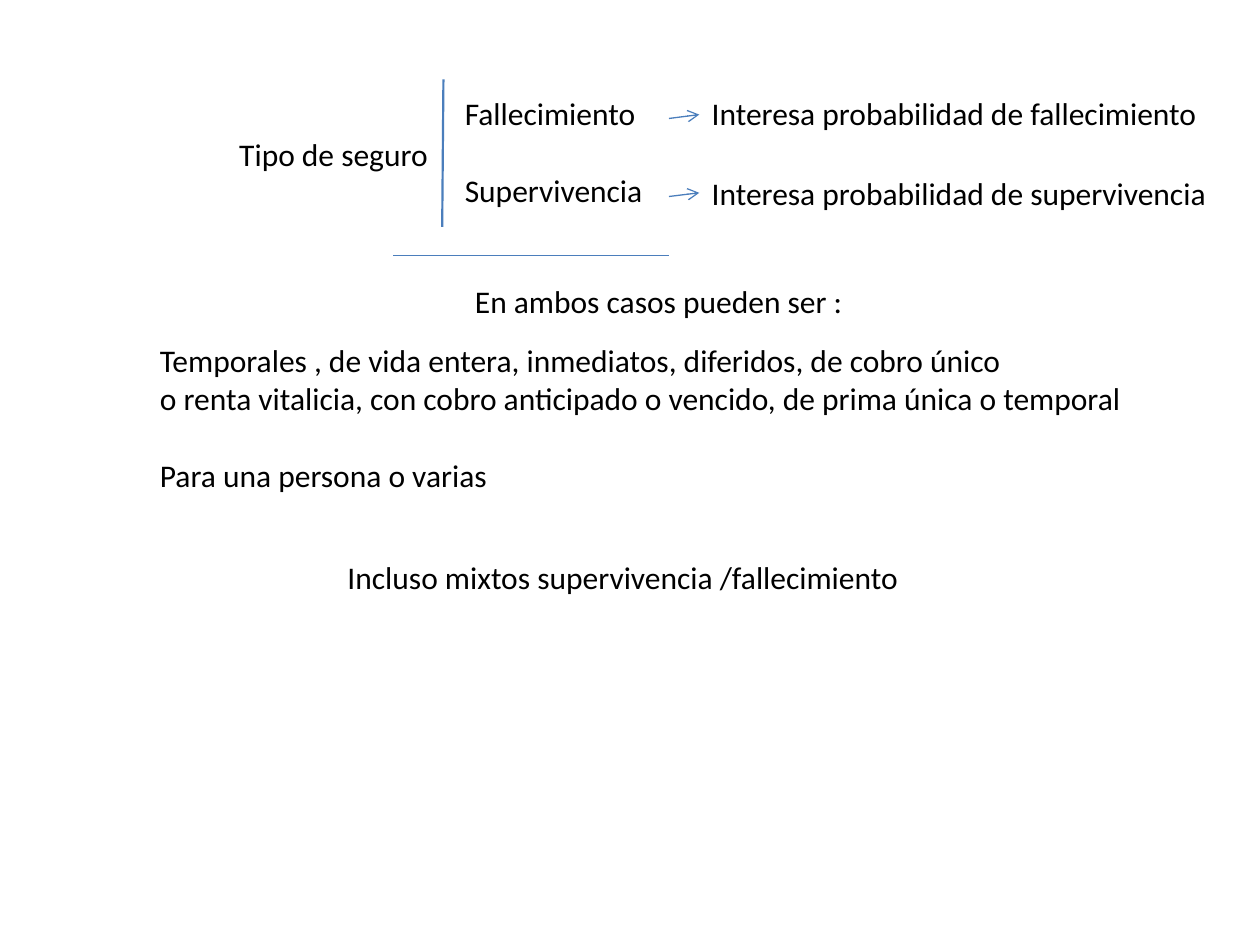
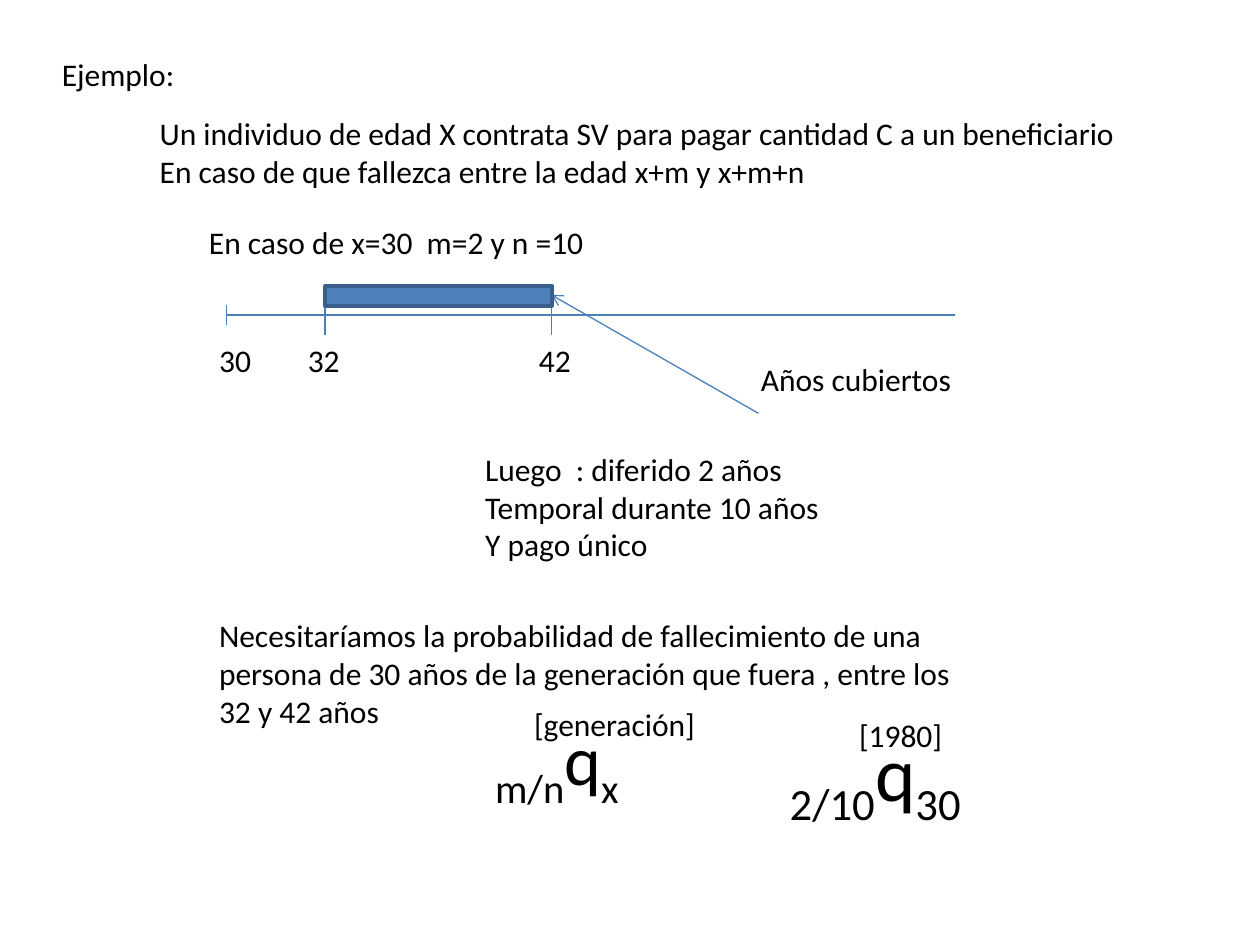
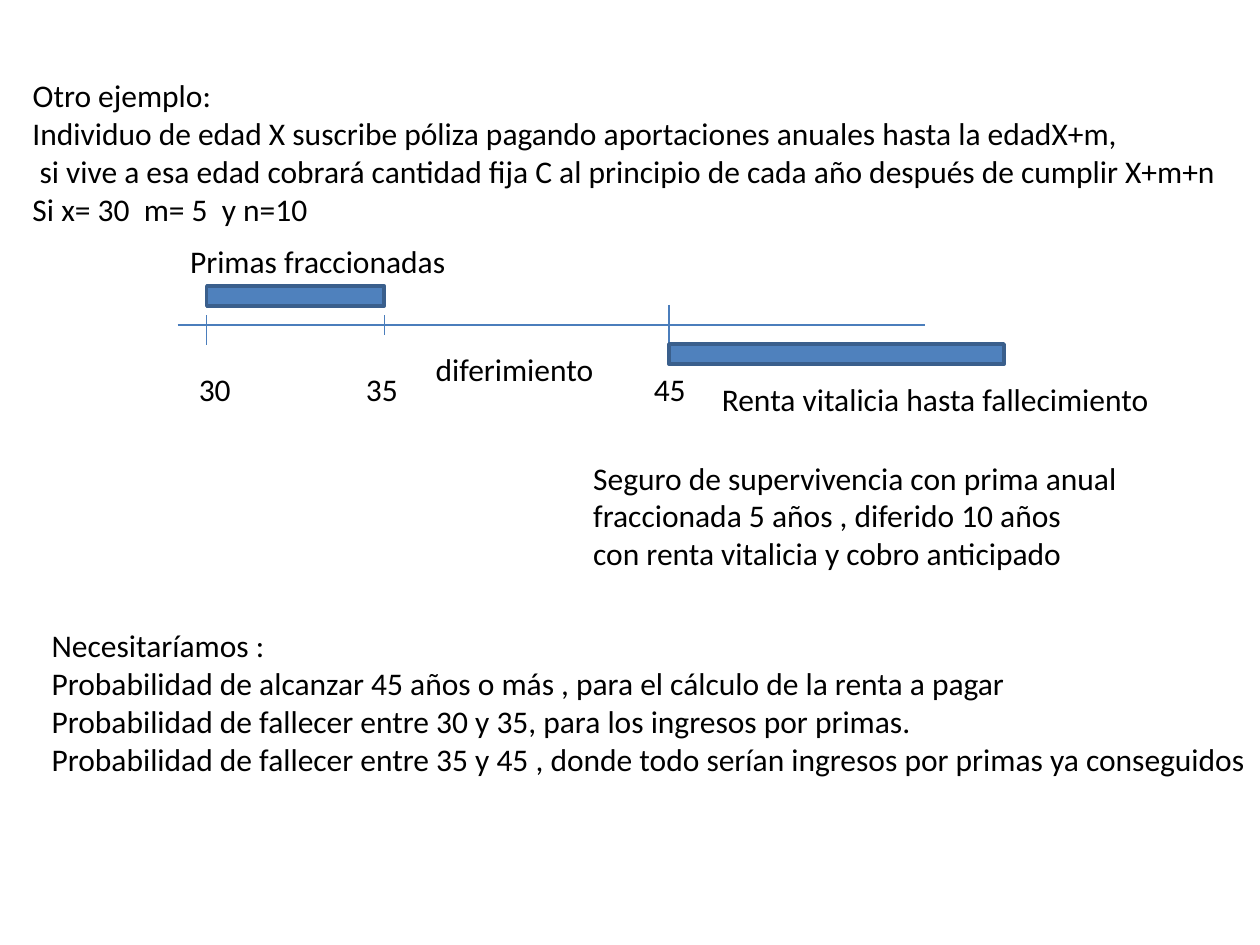
from lxml import etree
from pptx import Presentation
from pptx.dml.color import RGBColor
from pptx.enum.shapes import MSO_CONNECTOR as Connector, MSO_SHAPE as Shape
from pptx.enum.text import MSO_ANCHOR as Anchor, MSO_AUTO_SIZE as AutoSize, PP_ALIGN as Align
from pptx.oxml.ns import qn
from pptx.util import Pt

BLACK = RGBColor(0x00, 0x00, 0x00)
LINE_BLUE = RGBColor(0x4B, 0x7E, 0xBC)
BAR_BLUE = RGBColor(0x4F, 0x81, 0xBD)
BAR_EDGE = RGBColor(0x3A, 0x5F, 0x8C)

FRAME_FORMAT = {"word_wrap": True, "auto_size": AutoSize.NONE, "vertical_anchor": Anchor.TOP,
                "margin_left": Pt(7.2), "margin_right": Pt(7.2),
                "margin_top": Pt(3.6), "margin_bottom": Pt(3.6)}
FONT_FORMAT = {"name": "Calibri", "size": Pt(18), "bold": False}
GAP_BEFORE = {"Supervivencia": 22, "Para una persona o varias": 22}
LINE_HEIGHT = 22
BAR_HEIGHT = 11.5
HAIRLINE = 0.75


def write(box, left, top, width, lines, size=18):
    gaps = sum(GAP_BEFORE.get(line, 0) for line in lines)
    box.left, box.top, box.width = Pt(left), Pt(top), Pt(width)
    box.height = Pt(7.2 + gaps + len(lines) * LINE_HEIGHT * size / 18)
    frame = box.text_frame
    for name, value in FRAME_FORMAT.items():
        setattr(frame, name, value)
    for index, line in enumerate(lines):
        para = frame.add_paragraph() if index else frame.paragraphs[0]
        para.alignment = Align.LEFT
        para.space_before = Pt(GAP_BEFORE.get(line, 0))
        for piece in [line] if isinstance(line, str) else line:
            span = para.add_run()
            span.text = piece
            for name, value in FONT_FORMAT.items():
                setattr(span.font, name, value)
            span.font.size = Pt(size)
            span.font.color.rgb = BLACK


def draw_line(page, x1, y1, x2, y2, weight=HAIRLINE, arrow=False):
    line = page.shapes.add_connector(Connector.STRAIGHT, Pt(x1), Pt(y1), Pt(x2), Pt(y2))
    line.line.color.rgb = LINE_BLUE
    line.line.width = Pt(weight)
    properties = line.element.spPr
    if arrow:
        etree.SubElement(properties.find(qn("a:ln")), qn("a:tailEnd"), type="arrow")
    etree.SubElement(properties, qn("a:effectLst"))


PAGES = [
    {
        "title": (129.5, 73.4, 135, ["Tipo de seguro"]),
        "body": (84.2, 191.5, 580, [
            "Temporales , de vida entera, inmediatos, diferidos, de cobro único",
            "o renta vitalicia, con cobro anticipado o vencido, de prima única o temporal",
            "Para una persona o varias"]),
        "texts": [
            (258.5, 50.4, 121, ["Fallecimiento", "Supervivencia"]),
            (399.6, 50.4, 300, ["Interesa probabilidad de fallecimiento"]),
            (399.6, 95.8, 306, ["Interesa probabilidad de supervivencia"]),
            (264.3, 157.7, 232, ["En ambos casos pueden ser :"]),
            (191.5, 315.4, 338, ["Incluso mixtos supervivencia /fallecimiento"])],
        "lines": [
            (253.4, 45.4, 252.7, 129.6, 1.25),
            (382.3, 67.7, 399.6, 65.5, HAIRLINE, True),
            (382.3, 112.3, 399.6, 110.2, HAIRLINE, True),
            (224.6, 146.2, 382.3, 146.2)],
        "bars": [],
    },
    {
        "title": (28.1, 28.1, 86, ["Ejemplo:"]),
        "body": (270, 253.4, 214, [
            "Luego  : diferido 2 años", "Temporal durante 10 años", "Y pago único"]),
        "texts": [
            (84.2, 61.9, 576, [
                "Un individuo de edad X contrata SV para pagar cantidad C a un beneficiario",
                "En caso de que fallezca entre la edad x+m y x+m+n"]),
            (112.3, 123.8, 238, ["En caso de x=30  m=2 y n =10"]),
            (427.7, 202.3, 130, ["Años cubiertos"]),
            (118.1, 348.5, 444.2, [
                "Necesitaríamos la probabilidad de fallecimiento de una persona de 30 años "
                "de la generación que fuera , entre los 32 y 42 años"]),
            (298.1, 399.6, 112, ["[generación]"]),
            (483.8, 405.4, 68, ["[1980]"])],
        "lines": [
            (129.6, 180, 545.8, 180),
            (129.6, 174.2, 129.6, 185.8),
            (185.8, 174.2, 185.8, 191.5),
            (315, 174.2, 315, 191.5),
            (433.4, 236.2, 315, 168.5, HAIRLINE, True)],
        "bars": [(185.8, 163.4, 129.6)],
        "ages": (191.5, {"30": 118.1, "32": 168.8, "42": 300.8}),
        "formulas": [
            (275.8, 405.4, 100, [("m/n", "q", "x")], 40),
            (444.2, 410.4, 132, [("2/10", "q", "30")], 44)],
    },
    {
        "title": (11.5, 39.6, 120, ["Otro ejemplo:"]),
        "body": (22.3, 354.2, 714, [
            "Necesitaríamos :",
            "Probabilidad de alcanzar 45 años o más , para el cálculo de la renta a pagar",
            "Probabilidad de fallecer entre 30 y 35, para los ingresos por primas.",
            "Probabilidad de fallecer entre 35 y 45 , donde todo serían ingresos por primas ya conseguidos"]),
        "texts": [
            (11.5, 61.6, 706, [
                "Individuo de edad X suscribe póliza pagando aportaciones anuales hasta la edadX+m,",
                " si vive a esa edad cobrará cantidad fija C al principio de cada año después de cumplir X+m+n",
                "Si x= 30  m= 5  y n=10"]),
            (101.5, 134.6, 168, ["Primas fraccionadas"]),
            (241.9, 196.6, 112, ["diferimiento"]),
            (405.4, 213.8, 268, ["Renta vitalicia hasta fallecimiento"]),
            (331.9, 258.5, 324, [
                "Seguro de supervivencia con prima anual",
                "fraccionada 5 años , diferido 10 años",
                "con renta vitalicia y cobro anticipado"])],
        "lines": [
            (101.5, 185.8, 528.5, 185.8),
            (118.1, 180, 118.1, 197.3),
            (219.6, 180, 219.6, 191.5),
            (382.3, 174.2, 382.3, 197.3)],
        "bars": [(118.1, 163.4, 101.5), (382.3, 196.6, 191.5)],
        "ages": (208.1, {"30": 106.5, "35": 202, "45": 366.5}),
    },
]

deck = Presentation()
deck.slide_width, deck.slide_height = Pt(720), Pt(540)
layout = deck.slide_layouts[1]

for content in PAGES:
    page = deck.slides.add_slide(layout)
    write(page.shapes.title, *content["title"])
    body = page.placeholders[1]
    write(body, *content["body"])
    for para in body.text_frame.paragraphs:
        para.line_spacing = 1.0
    for properties in body.element.iter(qn("a:pPr")):
        properties.set("marL", "0")
        properties.set("indent", "0")
        etree.SubElement(properties, qn("a:buNone"))

    for line in content["lines"]:
        draw_line(page, *line)
    for left, top, width in content["bars"]:
        bar = page.shapes.add_shape(Shape.RECTANGLE, Pt(left), Pt(top), Pt(width), Pt(BAR_HEIGHT))
        bar.shadow.inherit = False
        bar.fill.solid()
        bar.fill.fore_color.rgb = BAR_BLUE
        bar.line.color.rgb = BAR_EDGE
        bar.line.width = Pt(2)

    age_top, ages = content.get("ages", (0, {}))
    age_labels = [(left, age_top, 40, [age]) for age, left in ages.items()]
    for text in content["texts"] + age_labels:
        write(page.shapes.add_textbox(0, 0, 0, 0), *text)

    for formula in content.get("formulas", []):
        box = page.shapes.add_textbox(0, 0, 0, 0)
        write(box, *formula)
        before, symbol, after = box.element.iter(qn("a:rPr"))
        for subscript in (before, after):
            subscript.set("baseline", "-25000")

deck.save("out.pptx")
